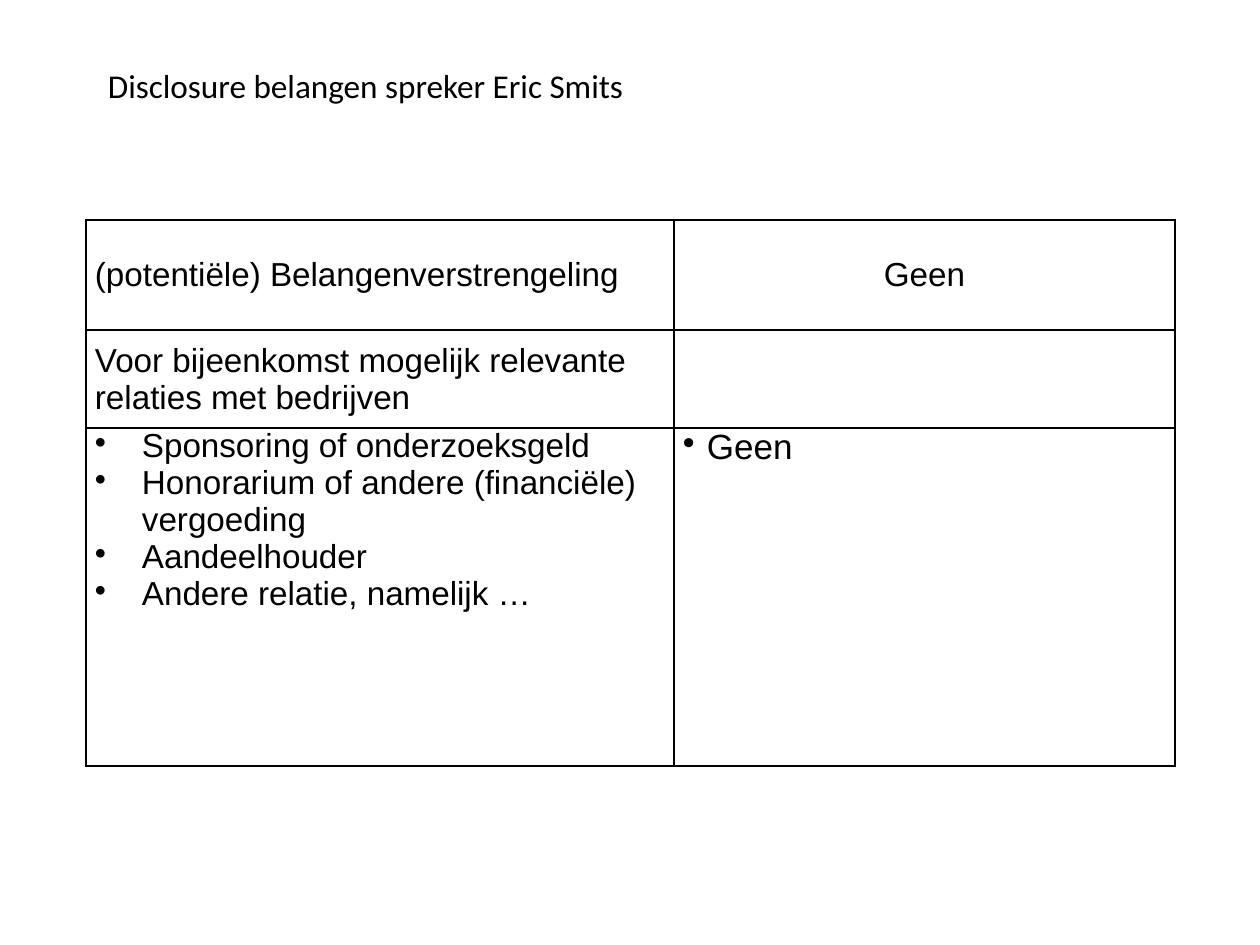
import pptx
import pptx.util
import pptx.dml.color
import pptx.enum.text
import pptx.oxml.ns
from lxml import etree

PX = 914400 // 126
BLACK = "000000"
ALIGN = pptx.enum.text.PP_ALIGN
ANCHOR = pptx.enum.text.MSO_ANCHOR


def color(hex_text):
    return pptx.dml.color.RGBColor.from_string(hex_text)


def write_text(frame, lines, font="Arial", size=19, align=ALIGN.LEFT, indent=0):
    frame.word_wrap = True
    for index, line in enumerate(lines):
        paragraph = frame.add_paragraph() if index else frame.paragraphs[0]
        paragraph.alignment = align
        if indent:
            properties = paragraph._p.get_or_add_pPr()
            properties.set("marL", str(indent * PX))
            properties.set("indent", str(-indent * PX))
            bullet = etree.SubElement(properties, pptx.oxml.ns.qn("a:buChar"))
            bullet.set("char", "•")
        run = paragraph.add_run()
        run.text = line
        run.font.name = font
        run.font.size = pptx.util.Pt(size)
        run.font.color.rgb = color(BLACK)


presentation = pptx.Presentation()
presentation.slide_width = 1260 * PX
presentation.slide_height = 945 * PX
slide = presentation.slides.add_slide(presentation.slide_layouts[6])

# Title
title = slide.shapes.add_textbox(108 * PX, 38 * PX, 1134 * PX, 157 * PX)
frame = title.text_frame
frame.margin_left = frame.margin_right = frame.margin_bottom = 0
frame.margin_top = 27 * PX
write_text(frame, ["Disclosure belangen spreker Eric Smits"], font="Calibri")

# Table grid
column_widths = [588, 501]
row_heights = [110, 98, 338]
table = slide.shapes.add_table(
    len(row_heights), len(column_widths), 86 * PX, 220 * PX,
    sum(column_widths) * PX, sum(row_heights) * PX).table
table.first_row = table.horz_banding = False
for column, width in zip(table.columns, column_widths):
    column.width = width * PX
for row, height in zip(table.rows, row_heights):
    row.height = height * PX

# Cell margins, borders and fill
for cell in table.iter_cells():
    cell.margin_left = cell.margin_right = 9 * PX
    cell.margin_top = cell.margin_bottom = 0
    cell.vertical_anchor = ANCHOR.MIDDLE
    cell_properties = cell._tc.get_or_add_tcPr()
    for side in ("lnL", "lnR", "lnT", "lnB"):
        border = etree.SubElement(cell_properties, pptx.oxml.ns.qn("a:" + side))
        border.set("w", str(pptx.util.Pt(1)))
        solid = etree.SubElement(border, pptx.oxml.ns.qn("a:solidFill"))
        etree.SubElement(solid, pptx.oxml.ns.qn("a:srgbClr")).set("val", BLACK)
    cell.fill.background()

# Heading rows
write_text(table.cell(0, 0).text_frame, ["(potentiële) Belangenverstrengeling"])
write_text(table.cell(0, 1).text_frame, ["Geen"], align=ALIGN.CENTER)
write_text(table.cell(1, 0).text_frame,
           ["Voor bijeenkomst mogelijk relevante relaties met bedrijven"])

# Bulleted row
relations = [
    "Sponsoring of onderzoeksgeld",
    "Honorarium of andere (financiële) vergoeding",
    "Aandeelhouder",
    "Andere relatie, namelijk …",
]
for cell in table.rows[2].cells:
    cell.vertical_anchor = ANCHOR.TOP
write_text(table.cell(2, 0).text_frame, relations, indent=47)
write_text(table.cell(2, 1).text_frame, ["Geen"], size=20, indent=24)

presentation.save("out.pptx")
